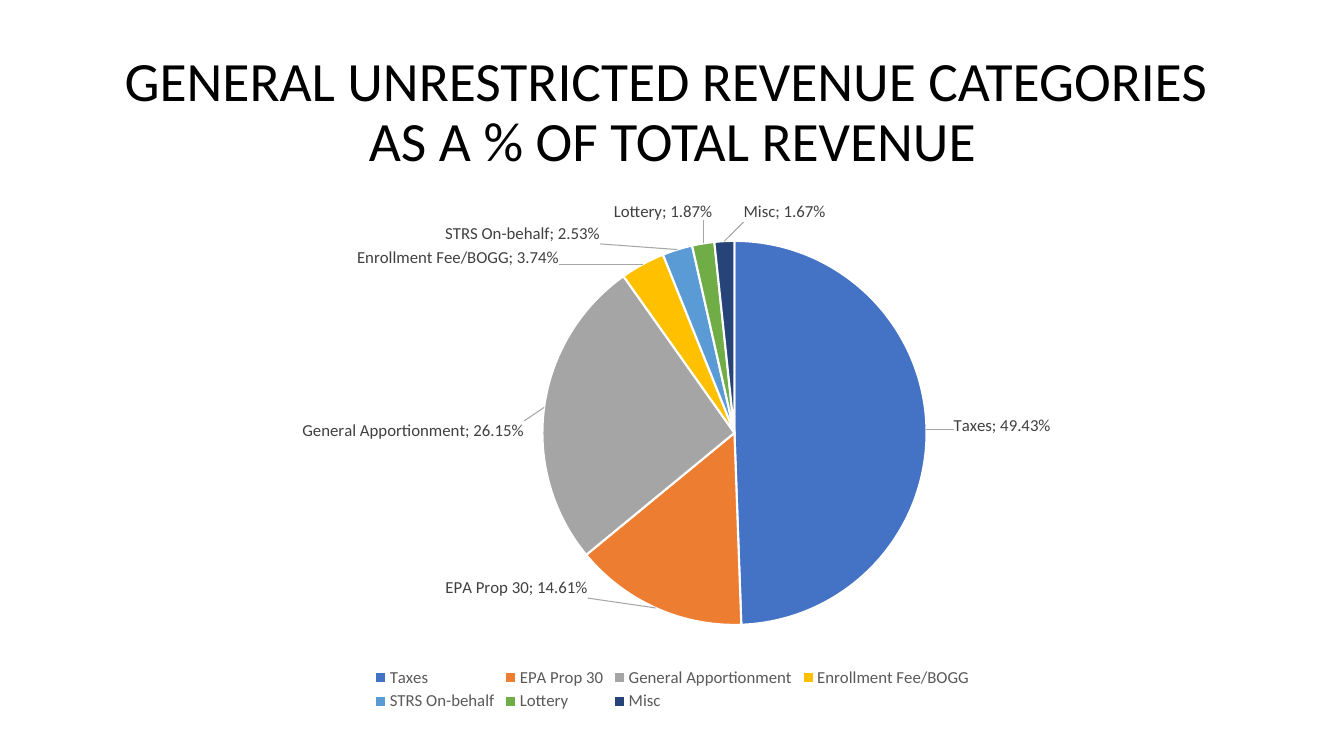
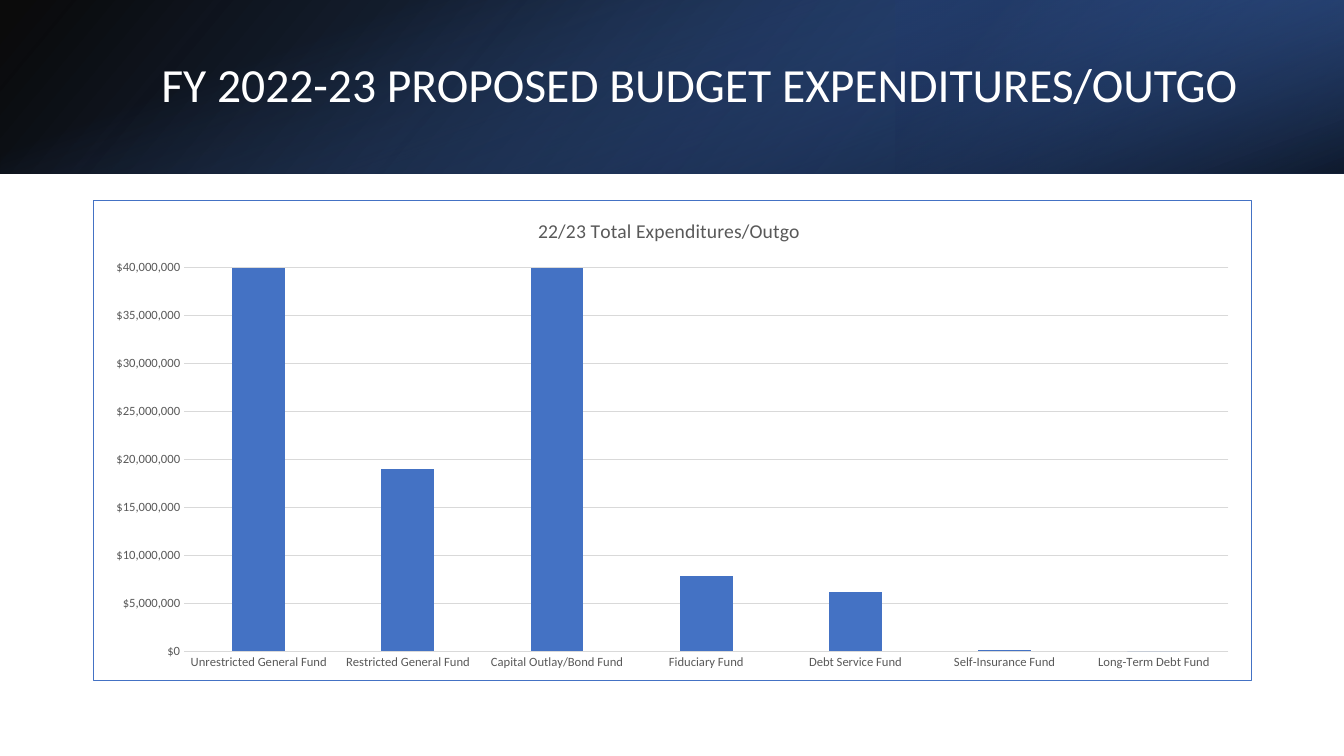
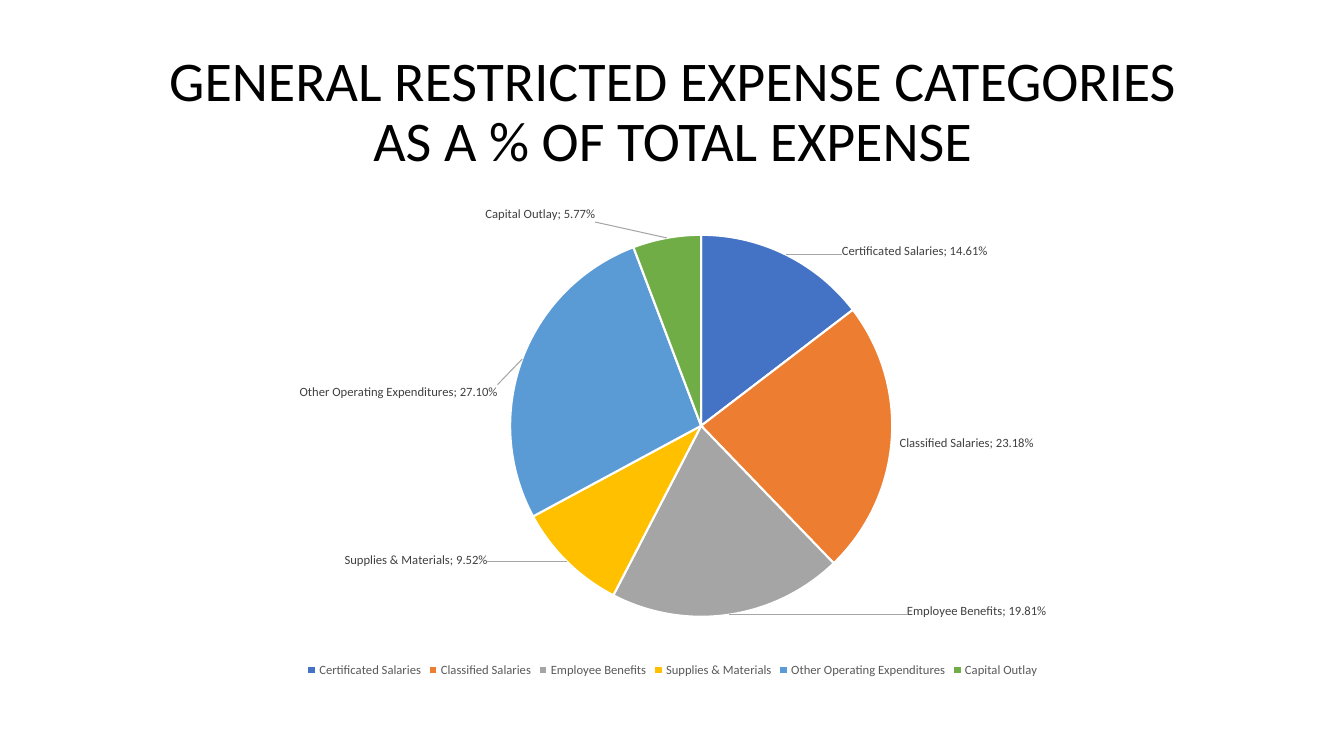
import copy
import dataclasses

import lxml.etree
import pptx
import pptx.chart.data
import pptx.dml.color
import pptx.enum.chart
import pptx.enum.shapes
import pptx.enum.text
import pptx.oxml
import pptx.oxml.ns
import pptx.util

Inches = pptx.util.Inches
qn = pptx.oxml.ns.qn


@dataclasses.dataclass(frozen=True)
class Theme:
    """Colours, font and type sizes shared by the slides."""

    font: str = "Calibri"
    black: str = "000000"
    white: str = "FFFFFF"
    blue: str = "4472C4"
    legend: str = "595959"
    label: str = "404040"
    leader: str = "A6A6A6"
    grid: str = "D9D9D9"
    slices: tuple = ("4472C4", "ED7D31", "A5A5A5", "FFC000", "5B9BD5", "70AD47", "264478")
    pie_title: float = 40
    long_pie_title: float = 39.6
    band_title: float = 34
    chart_title: float = 14
    large: float = 12
    small: float = 9


@dataclasses.dataclass(frozen=True)
class Box:
    """A rectangle in inches."""

    left: float
    top: float
    width: float
    height: float

    def lengths(self):
        """Return the four sides as lengths."""
        return [Inches(side) for side in (self.left, self.top, self.width, self.height)]


THEME = Theme()
WIDE = Box(0, 0, 13.33, 7.5)
TITLE = Box(0.92, 0.4, 11.5, 1.45)
ALIGN = pptx.enum.text.PP_ALIGN


def color(value):
    """Return a colour object for a hex string."""
    return pptx.dml.color.RGBColor.from_string(value)


def set_font(font, size, value):
    """Give a font the theme face, a size and a colour."""
    font.name = THEME.font
    font.size = pptx.util.Pt(size)
    font.bold = False
    font.color.rgb = color(value)


def set_line(line, value, width):
    """Give a line a colour and a width in points."""
    line.color.rgb = color(value)
    line.width = pptx.util.Pt(width)


def line_xml(value, width):
    """Return the XML of a solid line, its width in points."""
    return (f'<a:ln w="{pptx.util.Pt(width)}"><a:solidFill>'
            f'<a:srgbClr val="{value}"/></a:solidFill></a:ln>')


def add_title(page, box, text, size, value, align):
    """Fill the title placeholder and bring it to the front."""
    title = page.shapes.title
    title.left, title.top, title.width, title.height = box.lengths()
    frame = title.text_frame
    frame.text = text
    frame.word_wrap = True
    frame.vertical_anchor = pptx.enum.text.MSO_ANCHOR.MIDDLE
    para = frame.paragraphs[0]
    para.alignment = align
    para.line_spacing = 0.9
    set_font(para.font, size, value)
    title._element.getparent().append(title._element)


def set_layout(parent, position, box, left, top, width=None, height=None, inner=False):
    """Place a chart part, in inches measured within the chart box."""
    layout = parent.find(qn("c:layout"))
    if layout is not None:
        parent.remove(layout)
    layout = lxml.etree.Element(qn("c:layout"))
    manual = lxml.etree.SubElement(layout, qn("c:manualLayout"))
    values = {"layoutTarget": "inner"} if inner else {}
    if width is not None or parent.tag == qn("c:title"):
        values.update(xMode="edge", yMode="edge")
    values.update(x=left / box.width, y=top / box.height)
    if width is not None:
        values.update(w=width / box.width, h=height / box.height)
    for name, value in values.items():
        lxml.etree.SubElement(manual, qn("c:" + name)).set("val", str(value))
    parent.insert(position, layout)


def add_chart(page, box, kind, names, values, number_format):
    """Add a chart of one series and set its base font."""
    data = pptx.chart.data.CategoryChartData(number_format=number_format)
    data.categories = names
    data.add_series("Series 1", values)
    chart = page.shapes.add_chart(kind, *box.lengths(), data).chart
    chart.has_title = False
    chart.has_legend = False
    set_font(chart.font, 10, THEME.black)
    return chart


def add_pie(page, box, slices, size, pie, legend_area=None):
    """Add a pie with moved labels; each slice is name, value, shift."""
    names, values, shifts = zip(*slices)
    kind = pptx.enum.chart.XL_CHART_TYPE.PIE
    chart = add_chart(page, box, kind, names, values, "0.00%")
    left, top, diameter = pie
    plot_area = chart._chartSpace.chart.plotArea
    set_layout(plot_area, 0, box, left, top, diameter, diameter, True)
    chart.has_legend = True
    chart.legend.position = pptx.enum.chart.XL_LEGEND_POSITION.BOTTOM
    chart.legend.include_in_layout = False
    set_font(chart.legend.font, size, THEME.legend)
    if legend_area:
        set_layout(chart.legend._element, 1, box, *legend_area)

    series = chart.plots[0].series[0]
    for index, value in zip(range(len(names)), THEME.slices):
        style = series.points[index].format
        style.fill.solid()
        style.fill.fore_color.rgb = color(value)
        set_line(style.line, THEME.white, 1.5)
    labels = series.data_labels
    labels.show_value = True
    labels.show_category_name = True
    labels.number_format = "0.00%"
    labels.number_format_is_linked = False
    labels.position = pptx.enum.chart.XL_LABEL_POSITION.OUTSIDE_END
    set_font(labels.font, size, THEME.label)
    move_labels(labels._element, box, shifts)


def move_labels(labels, box, shifts):
    """Shift each label from its usual place by inches, with a thin leader line."""
    shared = [part for part in labels if part.tag != qn("c:showLeaderLines")]
    for index, shift in enumerate(shifts):
        label = pptx.oxml.parse_xml(
            f'<c:dLbl {pptx.oxml.ns.nsdecls("c")}><c:idx val="{index}"/></c:dLbl>')
        set_layout(label, 1, box, *shift)
        label.extend(copy.deepcopy(part) for part in shared)
        labels.insert(index, label)
    labels.append(pptx.oxml.parse_xml(
        f'<c:leaderLines {pptx.oxml.ns.nsdecls("c", "a")}>'
        f'<c:spPr>{line_xml(THEME.leader, 0.75)}</c:spPr></c:leaderLines>'))


def add_columns(page, box, title, funds):
    """Add the framed column chart of funds."""
    names, values = zip(*funds)
    kind = pptx.enum.chart.XL_CHART_TYPE.COLUMN_CLUSTERED
    chart = add_chart(page, box, kind, names, values, '"$"#,##0')
    chart.has_title = True
    chart.chart_title.text_frame.text = title
    set_font(chart.chart_title.text_frame.paragraphs[0].font, THEME.chart_title, THEME.legend)
    set_layout(chart.chart_title._element, 1, box, 4.38, 0.13)
    set_layout(chart._chartSpace.chart.plotArea, 0, box, 0.9, 0.67, 10.37, 3.82, inner=True)

    plot = chart.plots[0]
    plot.gap_width = 182
    plot.vary_by_categories = False
    fill = plot.series[0].format.fill
    fill.solid()
    fill.fore_color.rgb = color(THEME.blue)
    for axis in (chart.category_axis, chart.value_axis):
        axis.major_tick_mark = pptx.enum.chart.XL_TICK_MARK.NONE
        axis.minor_tick_mark = pptx.enum.chart.XL_TICK_MARK.NONE
        set_font(axis.tick_labels.font, THEME.small, THEME.legend)
    set_line(chart.category_axis.format.line, THEME.grid, 0.75)
    amounts = chart.value_axis
    amounts.minimum_scale = 0
    amounts.maximum_scale = 40000000
    amounts.major_unit = 5000000
    amounts.tick_labels.number_format = '"$"#,##0'
    amounts.tick_labels.number_format_is_linked = False
    amounts.format.line.fill.background()
    set_line(amounts.major_gridlines.format.line, THEME.grid, 0.75)
    chart._chartSpace.chart.addnext(pptx.oxml.parse_xml(
        f'<c:spPr {pptx.oxml.ns.nsdecls("c", "a")}>'
        f'<a:solidFill><a:srgbClr val="{THEME.white}"/></a:solidFill>'
        f'{line_xml(THEME.blue, 1)}</c:spPr>'))


def add_gradient(page, box, stops, angle, rotation=0, flip=False):
    """Add a rectangle with a gradient of position, colour and opacity."""
    kind = pptx.enum.shapes.MSO_SHAPE.RECTANGLE
    shape = page.shapes.add_shape(kind, *box.lengths())
    shape.shadow.inherit = False
    shape.line.fill.background()
    shape.rotation = rotation
    properties = shape._element.spPr
    if flip:
        properties.find(qn("a:xfrm")).set("flipH", "1")
    parts = "".join(
        f'<a:gs pos="{place * 1000}"><a:srgbClr val="{value}">'
        f'<a:alpha val="{opacity * 1000}"/></a:srgbClr></a:gs>'
        for place, value, opacity in stops)
    properties.find(qn("a:prstGeom")).addnext(pptx.oxml.parse_xml(
        f'<a:gradFill {pptx.oxml.ns.nsdecls("a")} rotWithShape="1"><a:gsLst>{parts}</a:gsLst>'
        f'<a:lin ang="{angle * 60000}" scaled="0"/></a:gradFill>'))


def add_band(page, box):
    """Layer three gradients into the dark title band."""
    third = box.width / 3
    middle = box.left + box.width / 2
    center = box.top + box.height / 2
    right = Box(box.left + box.width - third, box.top, third, box.height)
    upright = Box(middle - box.height / 2, center - box.width / 2, box.height, box.width)
    add_gradient(page, box, [(0, THEME.black, 96), (100, "2F5597", 100)], 140, flip=True)
    add_gradient(page, right, [(19, "203864", 68), (100, THEME.blue, 79)], 320, 180, True)
    add_gradient(page, upright, [(23, THEME.blue, 0), (99, THEME.black, 74)], 340, 90)


def add_page(deck):
    """Add a slide that has only a title."""
    return deck.slides.add_slide(deck.slide_layouts[5])


def revenue_slide(deck):
    """Build the unrestricted revenue slide."""
    page = add_page(deck)
    add_title(page, TITLE, "GENERAL UNRESTRICTED REVENUE CATEGORIES \vAS A % OF TOTAL REVENUE",
              THEME.long_pie_title, THEME.black, ALIGN.CENTER)
    slices = [
        ("Taxes", 0.4943, (0.21, -0.04)),
        ("EPA Prop 30", 0.1461, (-0.65, -0.35)),
        ("General Apportionment", 0.2615, (-0.14, 0.34)),
        ("Enrollment Fee/BOGG", 0.0374, (-0.8, 0.09)),
        ("STRS On-behalf", 0.0253, (-0.75, 0)),
        ("Lottery", 0.0187, (0.1, -0.17)),
        ("Misc", 0.0167, (0.6, -0.13)),
    ]
    add_pie(page, Box(0.92, 2, 11.5, 5.1), slices, THEME.large,
            (4.46, 0.39, 3.81), (2.75, 4.59, 6, 0.5))


def outgo_slide(deck):
    """Build the expenditures slide with its band."""
    page = add_page(deck)
    add_band(page, Box(0, 0, WIDE.width, 1.72))
    add_title(page, Box(1.5, 0.38, 10.98, 0.96), "FY 2022-23 PROPOSED BUDGET EXPENDITURES/OUTGO",
              THEME.band_title, THEME.white, ALIGN.LEFT)
    funds = [
        ("Unrestricted General Fund", 41000000),
        ("Restricted General Fund", 19000000),
        ("Capital Outlay/Bond Fund", 112000000),
        ("Fiduciary Fund", 7900000),
        ("Debt Service Fund", 6200000),
        ("Self-Insurance Fund", 200000),
        ("Long-Term Debt Fund", 0),
    ]
    add_columns(page, Box(0.92, 1.98, 11.5, 4.78), "22/23 Total Expenditures/Outgo", funds)


def expense_slide(deck):
    """Build the restricted expense slide."""
    page = add_page(deck)
    add_title(page, TITLE, "GENERAL RESTRICTED EXPENSE CATEGORIES\vAS A % OF TOTAL EXPENSE",
              THEME.pie_title, THEME.black, ALIGN.CENTER)
    slices = [
        ("Certificated Salaries", 0.1461, (0.53, 0.09)),
        ("Classified Salaries", 0.2318, (0.02, 0.03)),
        ("Employee Benefits", 0.1981, (1.76, -0.17)),
        ("Supplies & Materials", 0.0952, (-0.75, -0.13)),
        ("Other Operating Expenditures", 0.271, (-0.19, 0.42)),
        ("Capital Outlay", 0.0577, (-0.7, -0.1)),
    ]
    add_pie(page, Box(0.92, 2, 11.5, 4.76), slices, THEME.small, (4.14, 0.33, 3.79))


def main():
    """Build and save the deck."""
    deck = pptx.Presentation()
    deck.slide_width = Inches(WIDE.width)
    deck.slide_height = Inches(WIDE.height)
    revenue_slide(deck)
    outgo_slide(deck)
    expense_slide(deck)
    deck.save("out.pptx")


if __name__ == "__main__":
    main()
